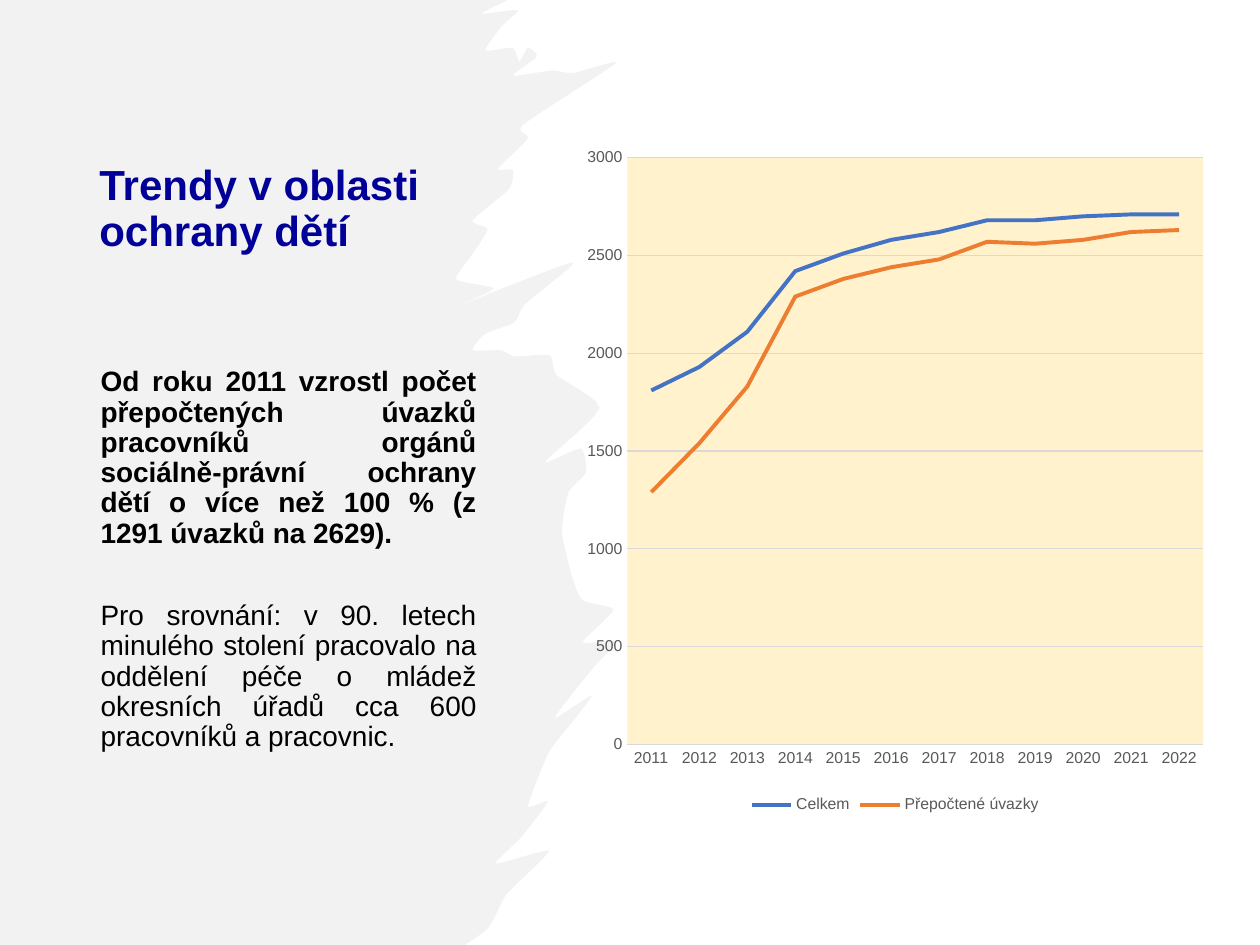
import pptx
import pptx.chart.data
import pptx.dml.color
import pptx.enum.chart
import pptx.enum.text
import pptx.oxml
import pptx.oxml.ns
import pptx.util

PX = 9144  # EMU per px, at 100 px to the inch
FONT = "Arial"
GREY = "595959"
RULE = "D9D9D9"


def colour(value):
    return pptx.dml.color.RGBColor.from_string(value)


def add_text(frame, text, size, shade="000000", bold=False, align=None, before=0, after=0, indent=0):
    """Fill the frame's empty first paragraph, or append a new one."""
    para = frame.paragraphs[0] if not frame.text else frame.add_paragraph()
    para.alignment = align
    para.line_spacing = 0.9
    para.space_before = pptx.util.Pt(before)
    para.space_after = pptx.util.Pt(after)
    if indent:
        para._p.get_or_add_pPr().set("marL", str(indent * PX))
    span = para.add_run()
    span.text = text
    span.font.name = FONT
    span.font.size = pptx.util.Pt(size)
    span.font.bold = bold
    span.font.color.rgb = colour(shade)


deck = pptx.Presentation()
deck.slide_width = 1000 * PX
deck.slide_height = 750 * PX
page = deck.slides.add_slide(deck.slide_layouts[6])

# Brushed panel: straight sides, then a ragged edge smoothed through these points.
edge = [
    (369, 750), (388, 736), (401, 711), (417, 695), (436, 675), (408, 682), (393, 685),
    (414, 664), (435, 636), (419, 640), (432, 605), (439, 592), (470, 552), (440, 570),
    (470, 531), (489, 509), (462, 510), (487, 484), (463, 477), (455, 461), (446, 423),
    (451, 391), (465, 375), (461, 356), (432, 367), (476, 324), (442, 298), (436, 282),
    (409, 283), (397, 278), (375, 278), (385, 265), (408, 256), (417, 241), (455, 208),
    (363, 243), (392, 229), (362, 222), (374, 203), (387, 182), (375, 175), (404, 150),
    (407, 135), (395, 134), (419, 110), (415, 99), (489, 50), (455, 58), (438, 56),
    (407, 60), (426, 45), (419, 38), (412, 49), (407, 38), (385, 40), (399, 20),
    (411, 8), (382, 11), (403, 0),
]
STEPS = 5
outline = [(0, 0), (0, 750), edge[0]]
padded = [edge[0], *edge, edge[-1]]
for before, start, end, after in zip(padded, padded[1:], padded[2:], padded[3:]):
    for step in range(1, STEPS + 1):
        t = step / STEPS
        u = 1 - t
        outline.append(tuple(
            u * u * (1 + 2 * t) * b + t * t * (3 - 2 * t) * c
            + 0.3 * t * u * (u * (c - a) - t * (d - b))
            for a, b, c, d in zip(before, start, end, after)))
points = [(x * PX, y * PX) for x, y in outline]
builder = page.shapes.build_freeform(*points[0])
builder.add_line_segments(points[1:], close=True)
panel = builder.convert_to_shape()
panel.shadow.inherit = False
panel.line.fill.background()
panel.fill.solid()
panel.fill.fore_color.rgb = colour("E7E6E6")
tint = panel._element.spPr.find(".//" + pptx.oxml.ns.qn("a:srgbClr"))
tint.append(pptx.oxml.parse_xml(f'<a:alpha {pptx.oxml.ns.nsdecls("a")} val="50000"/>'))

title = page.shapes.add_textbox(69 * PX, 68 * PX, 319 * PX, 197 * PX).text_frame
title.word_wrap = True
title.vertical_anchor = pptx.enum.text.MSO_ANCHOR.MIDDLE
add_text(title, "Trendy v oblasti ochrany dětí", 24, shade="000099", bold=True)

body = page.shapes.add_textbox(69 * PX, 287 * PX, 319 * PX, 389 * PX).text_frame
body.word_wrap = True
for text, bold in [
    ("Od roku 2011 vzrostl počet přepočtených úvazků pracovníků orgánů sociálně-právní "
     "ochrany dětí o více než 100 % (z 1291 úvazků na 2629).", True),
    ("Pro srovnání: v 90. letech minulého stolení pracovalo na oddělení péče o mládež "
     "okresních úřadů cca 600 pracovníků a pracovnic.", False),
]:
    add_text(body, text, 16, bold=bold, align=pptx.enum.text.PP_ALIGN.JUSTIFY,
             before=6, after=24, indent=1)

lines = [
    ("Celkem", "4472C4", [1810, 1930, 2110, 2420, 2510, 2580, 2620, 2680, 2680, 2700, 2710, 2710]),
    ("Přepočtené úvazky", "ED7D31",
     [1290, 1540, 1830, 2290, 2380, 2440, 2480, 2570, 2560, 2580, 2620, 2630]),
]
data = pptx.chart.data.CategoryChartData()
data.categories = [str(year) for year in range(2011, 2023)]
for name, _, values in lines:
    data.add_series(name, values)
chart = page.shapes.add_chart(pptx.enum.chart.XL_CHART_TYPE.LINE, 456 * PX, 107 * PX,
                              509 * PX, 543 * PX, data).chart
chart.has_title = False
chart.font.name = FONT
chart.font.size = pptx.util.Pt(10)
chart.font.color.rgb = colour("000000")
chart.has_legend = True
chart.legend.position = pptx.enum.chart.XL_LEGEND_POSITION.BOTTOM
chart.legend.include_in_layout = False

years, counts = chart.category_axis, chart.value_axis
counts.minimum_scale, counts.maximum_scale, counts.major_unit = 0, 3000, 500
counts.format.line.fill.background()
for axis in (years, counts):
    axis.major_tick_mark = pptx.enum.chart.XL_TICK_MARK.NONE
for font in (years.tick_labels.font, counts.tick_labels.font, chart.legend.font):
    font.name = FONT
    font.size = pptx.util.Pt(9)
    font.color.rgb = colour(GREY)
for rule in (years.format.line, counts.major_gridlines.format.line):
    rule.color.rgb = colour(RULE)
    rule.width = pptx.util.Pt(0.75)

plot = chart.plots[0]
plot.vary_by_categories = False
for series, (_, shade, _) in zip(plot.series, lines):
    series.smooth = False
    series.marker.style = pptx.enum.chart.XL_MARKER_STYLE.NONE
    series.format.line.color.rgb = colour(shade)
    series.format.line.width = pptx.util.Pt(2.25)

chart._chartSpace.chart.plotArea.append(pptx.oxml.parse_xml(
    f'<c:spPr {pptx.oxml.ns.nsdecls("c", "a")}><a:solidFill><a:srgbClr val="FFF2CC"/>'
    '</a:solidFill></c:spPr>'))

deck.save("out.pptx")
